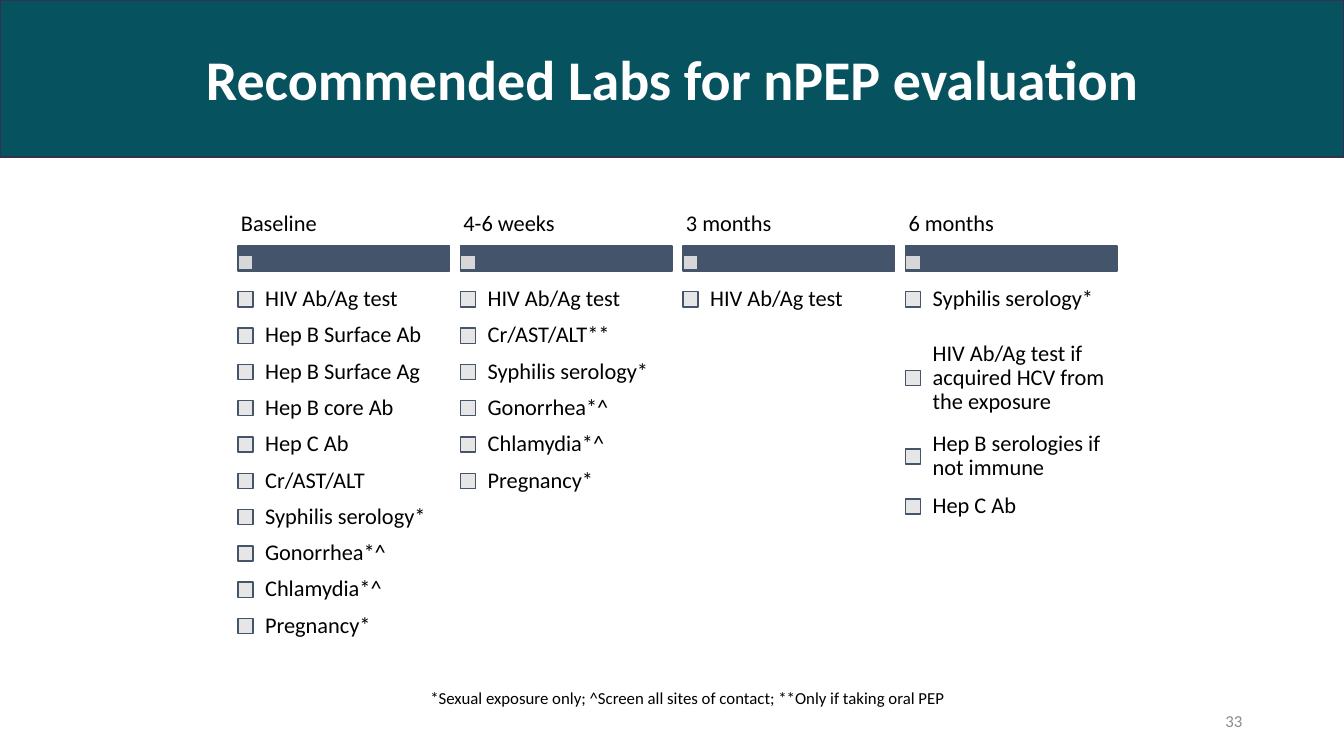
import pptx
import pptx.util
import pptx.dml.color
import pptx.enum.shapes
import pptx.enum.text
import lxml.etree

Inches, Pt = pptx.util.Inches, pptx.util.Pt
RGB = pptx.dml.color.RGBColor.from_string
ALIGN = pptx.enum.text.PP_ALIGN
MIDDLE = pptx.enum.text.MSO_ANCHOR.MIDDLE

COLORS = {
    "banner": "06525E", "banner_line": "33324F", "bar": "44546A", "box": "E7E6E6",
    "text": "000000", "white": "FFFFFF", "number": "8C8C8C",
}
ROW = 0.36
BOX = 0.15
SCHEDULE = [
    ("Baseline", ["HIV Ab/Ag test", "Hep B Surface Ab", "Hep B Surface Ag",
                  "Hep B core Ab", "Hep C Ab", "Cr/AST/ALT", "Syphilis serology*",
                  "Gonorrhea*^", "Chlamydia*^", "Pregnancy*"], {}),
    ("4-6 weeks", ["HIV Ab/Ag test", "Cr/AST/ALT**", "Syphilis serology*",
                   "Gonorrhea*^", "Chlamydia*^", "Pregnancy*"], {}),
    ("3 months", ["HIV Ab/Ag test"], {}),
    ("6 months", ["Syphilis serology*", "HIV Ab/Ag test if acquired HCV from the exposure",
                  "Hep B serologies if not immune", "Hep C Ab"], {1: 1.2, 3: 0.63}),
]

prs = pptx.Presentation()
prs.slide_width, prs.slide_height = Inches(13.33), Inches(7.5)
s = prs.slides.add_slide(prs.slide_layouts[5])


def add_rect(x, y, w, h, fill):
    sp = s.shapes.add_shape(pptx.enum.shapes.MSO_SHAPE.RECTANGLE,
                            Inches(x), Inches(y), Inches(w), Inches(h))
    sp.shadow.inherit = False
    sp.fill.solid()
    sp.fill.fore_color.rgb = RGB(COLORS[fill])
    sp.line.color.rgb = RGB(COLORS["bar"])
    sp.line.width = Pt(1)
    return sp


def add_text(x, y, w, h, text, insets=(0.1, 0.05), size=16, color="text", **paragraph):
    tf = s.shapes.add_textbox(Inches(x), Inches(y), Inches(w), Inches(h)).text_frame
    dx, dy = Inches(insets[0]), Inches(insets[1])
    frame = {"word_wrap": True, "vertical_anchor": MIDDLE, "margin_left": dx,
             "margin_right": dx, "margin_top": dy, "margin_bottom": dy}
    for name, value in frame.items():
        setattr(tf, name, value)
    p = tf.paragraphs[0]
    for name, value in paragraph.items():
        setattr(p, name, value)
    r = p.add_run()
    r.text = text
    for name, value in {"name": "Calibri", "size": Pt(size)}.items():
        setattr(r.font, name, value)
    r.font.color.rgb = RGB(COLORS[color])


# Title banner
title = s.shapes.title
banner = {"left": 0, "top": 0, "width": prs.slide_width, "height": Inches(1.56)}
for name, value in banner.items():
    setattr(title, name, value)
title.fill.solid()
title.fill.fore_color.rgb = RGB(COLORS["banner"])
title.line.color.rgb = RGB(COLORS["banner_line"])
title.line.width = Pt(1)
tf = title.text_frame
tf.text = "Recommended Labs for nPEP evaluation"
tf.vertical_anchor = MIDDLE
p = tf.paragraphs[0]
p.alignment = ALIGN.CENTER
for name, value in {"name": "Calibri", "size": Pt(40), "bold": True}.items():
    setattr(p.runs[0].font, name, value)
p.runs[0].font.color.rgb = RGB(COLORS["white"])

# One checklist column per visit
for col, (visit, labs, tall_rows) in enumerate(SCHEDULE):
    x = 2.36 + col * 2.207
    add_rect(x, 2.44, 2.1, 0.25, "bar")
    sp = add_rect(x, 2.53, BOX, BOX, "box")
    color = sp.fill._xPr.find(".//" + pptx.oxml.ns.qn("a:srgbClr"))
    lxml.etree.SubElement(color, pptx.oxml.ns.qn("a:alpha"), val="90000")
    add_text(x, 2, 2.1, 0.44, visit, (0.03, 0.02), line_spacing=0.9)

    y = 2.79
    for row, lab in enumerate(labs):
        h = tall_rows.get(row, ROW)
        add_rect(x, y + (h - BOX) / 2, BOX, BOX, "box")
        add_text(x + BOX, y, 1.96, h, lab, (0.12, 0.12), line_spacing=0.9)
        y += h

# Footnote and slide number
add_text(4.17, 6.77, 7.83, 0.3,
         "*Sexual exposure only; ^Screen all sites of contact; **Only if taking oral PEP",
         size=12)
add_text(9.42, 6.95, 3, 0.4, "33", size=12, color="number", alignment=ALIGN.RIGHT)

prs.save("out.pptx")
